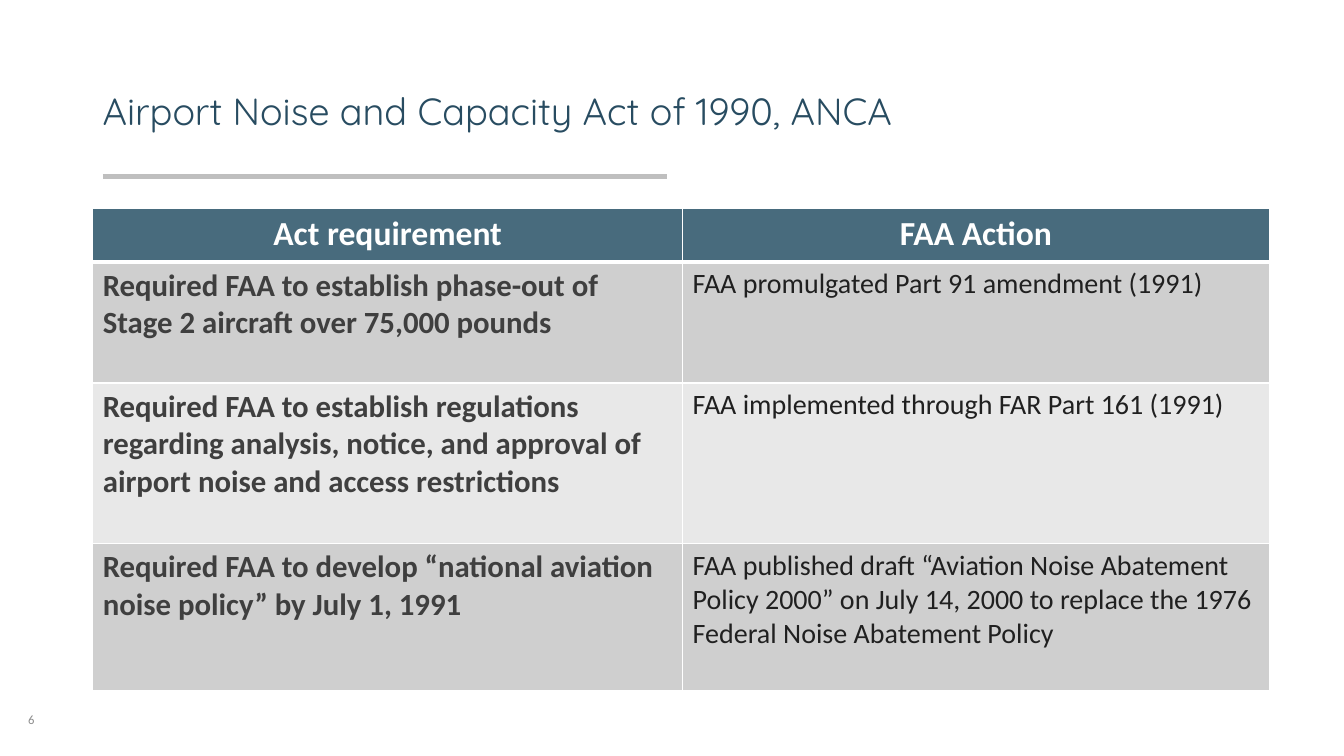
from dataclasses import dataclass

from lxml.etree import SubElement
from pptx import Presentation
from pptx.dml.color import RGBColor
from pptx.enum.shapes import MSO_CONNECTOR
from pptx.enum.text import MSO_ANCHOR, PP_ALIGN
from pptx.oxml import parse_xml
from pptx.oxml.ns import nsdecls, qn
from pptx.util import Inches, Pt


@dataclass(frozen=True)
class TextStyle:
    size: float
    color: str
    bold: bool = False
    font: str = "Calibri"
    align: PP_ALIGN = PP_ALIGN.LEFT
    line_spacing: float = 1.0


@dataclass(frozen=True)
class TextItem:
    text: str
    left: float
    top: float
    width: float
    height: float
    style: TextStyle


@dataclass(frozen=True)
class TableRow:
    height: float
    fill: str
    texts: tuple[str, str]
    styles: tuple[TextStyle, TextStyle]
    top_border: int = 1
    bottom_border: int = 1


HEADER = TextStyle(24, "FFFFFF", bold=True, align=PP_ALIGN.CENTER)
REQUIREMENT = TextStyle(22, "3F3F3F", bold=True)
ACTION = TextStyle(20, "202020")
BODY = (REQUIREMENT, ACTION)

TEXTS = [
    TextItem("Airport Noise and Capacity Act of 1990, ANCA", 0.92, 0.4, 11.5, 1.45,
             TextStyle(27, "284C61", font="Quicksand", line_spacing=0.9)),
    TextItem("6", 0.18, 6.94, 0.41, 0.4, TextStyle(9, "8C8C8C")),
]

COLUMN_WIDTHS = (5.85, 5.82)
ROWS = [
    TableRow(0.53, "486B7D", ("Act requirement", "FAA Action"),
             (HEADER, HEADER), bottom_border=3),
    TableRow(1.2, "CFCFCF",
             ("Required FAA to establish phase-out of Stage 2 aircraft over 75,000 pounds",
              "FAA promulgated Part 91 amendment (1991)"), BODY, top_border=3),
    TableRow(1.59, "E8E8E8",
             ("Required FAA to establish regulations regarding analysis, notice, "
              "and approval of airport noise and access restrictions",
              "FAA implemented through FAR Part 161 (1991)"), BODY),
    TableRow(1.46, "CFCFCF",
             ("Required FAA to develop “national aviation noise policy” by July 1, 1991",
              "FAA published draft “Aviation Noise Abatement Policy 2000” on July 14, 2000 "
              "to replace the 1976 Federal Noise Abatement Policy"), BODY),
]


def rgb(value: str) -> RGBColor:
    return RGBColor.from_string(value)


def write_text(frame, text: str, style: TextStyle) -> None:
    para = frame.paragraphs[0]
    para.alignment = style.align
    para.line_spacing = style.line_spacing
    span = para.add_run()
    span.text = text
    span.font.name = style.font
    span.font.size = Pt(style.size)
    span.font.bold = style.bold
    span.font.color.rgb = rgb(style.color)


def add_text(page, item: TextItem) -> None:
    box = page.shapes.add_textbox(Inches(item.left), Inches(item.top),
                                  Inches(item.width), Inches(item.height))
    frame = box.text_frame
    frame.word_wrap = True
    frame.vertical_anchor = MSO_ANCHOR.MIDDLE
    write_text(frame, item.text, item.style)


def add_rule(page) -> None:
    rule = page.shapes.add_connector(MSO_CONNECTOR.STRAIGHT, Inches(1.02), Inches(1.75),
                                     Inches(6.62), Inches(1.75))
    rule.line.color.rgb = rgb("BFBFBF")
    rule.line.width = Pt(3)
    SubElement(rule._element.spPr, qn("a:effectLst"))


def set_borders(cell, row: TableRow) -> None:
    widths = {"lnL": 1, "lnR": 1, "lnT": row.top_border, "lnB": row.bottom_border}
    properties = cell._tc.get_or_add_tcPr()
    for position, (tag, points) in enumerate(widths.items()):
        border = parse_xml(
            f'<a:{tag} {nsdecls("a")} w="{Pt(points)}"><a:solidFill>'
            f'<a:srgbClr val="FFFFFF"/></a:solidFill></a:{tag}>')
        properties.insert(position, border)


def add_requirements_table(page) -> None:
    table = page.shapes.add_table(
        len(ROWS), len(COLUMN_WIDTHS), Inches(0.92), Inches(2.07),
        Inches(sum(COLUMN_WIDTHS)), Inches(sum(row.height for row in ROWS))).table
    for column, width in zip(table.columns, COLUMN_WIDTHS):
        column.width = Inches(width)
    for table_row, row in zip(table.rows, ROWS):
        table_row.height = Inches(row.height)
        for cell, text, style in zip(table_row.cells, row.texts, row.styles):
            cell.fill.solid()
            cell.fill.fore_color.rgb = rgb(row.fill)
            set_borders(cell, row)
            write_text(cell.text_frame, text, style)


def main() -> None:
    deck = Presentation()
    deck.slide_width = Inches(13.33)
    deck.slide_height = Inches(7.5)
    page = deck.slides.add_slide(deck.slide_layouts[6])

    # Title rule, title and page number
    add_rule(page)
    for item in TEXTS:
        add_text(page, item)

    # Requirements and the actions taken
    add_requirements_table(page)
    deck.save("out.pptx")


if __name__ == "__main__":
    main()
